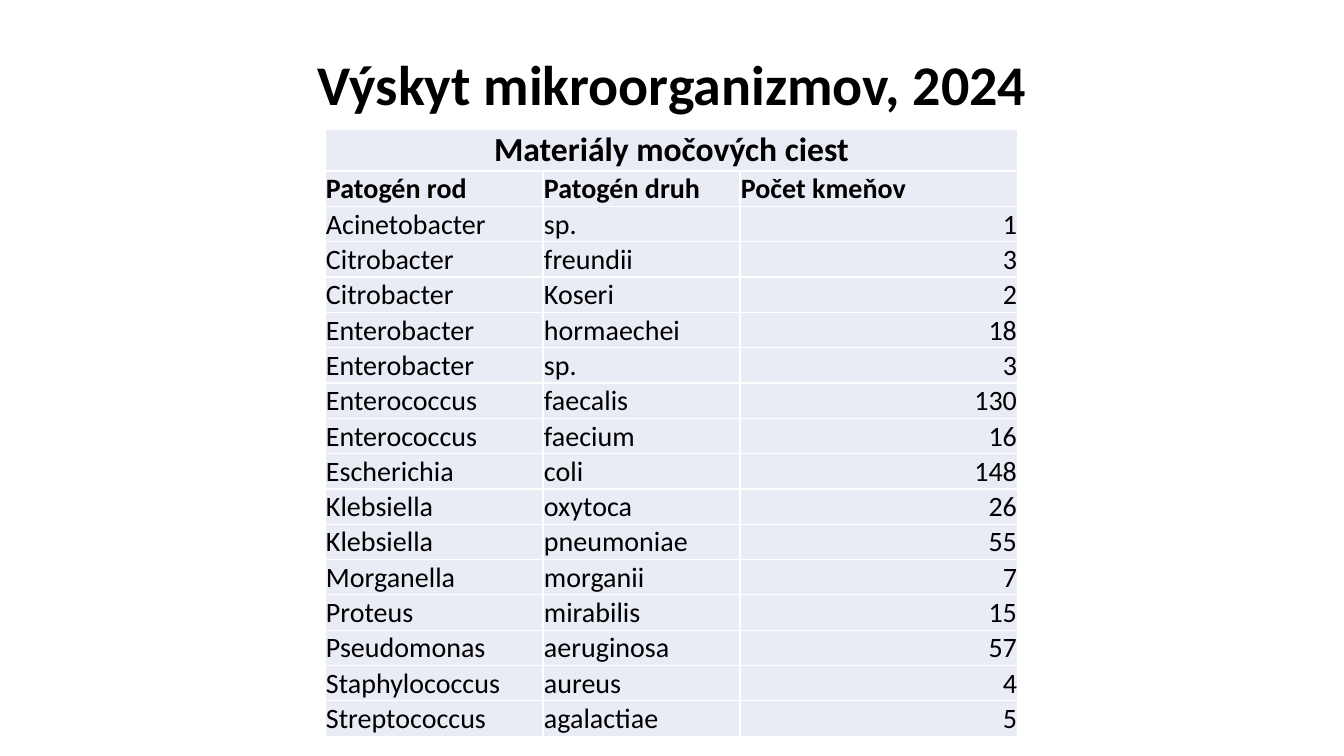
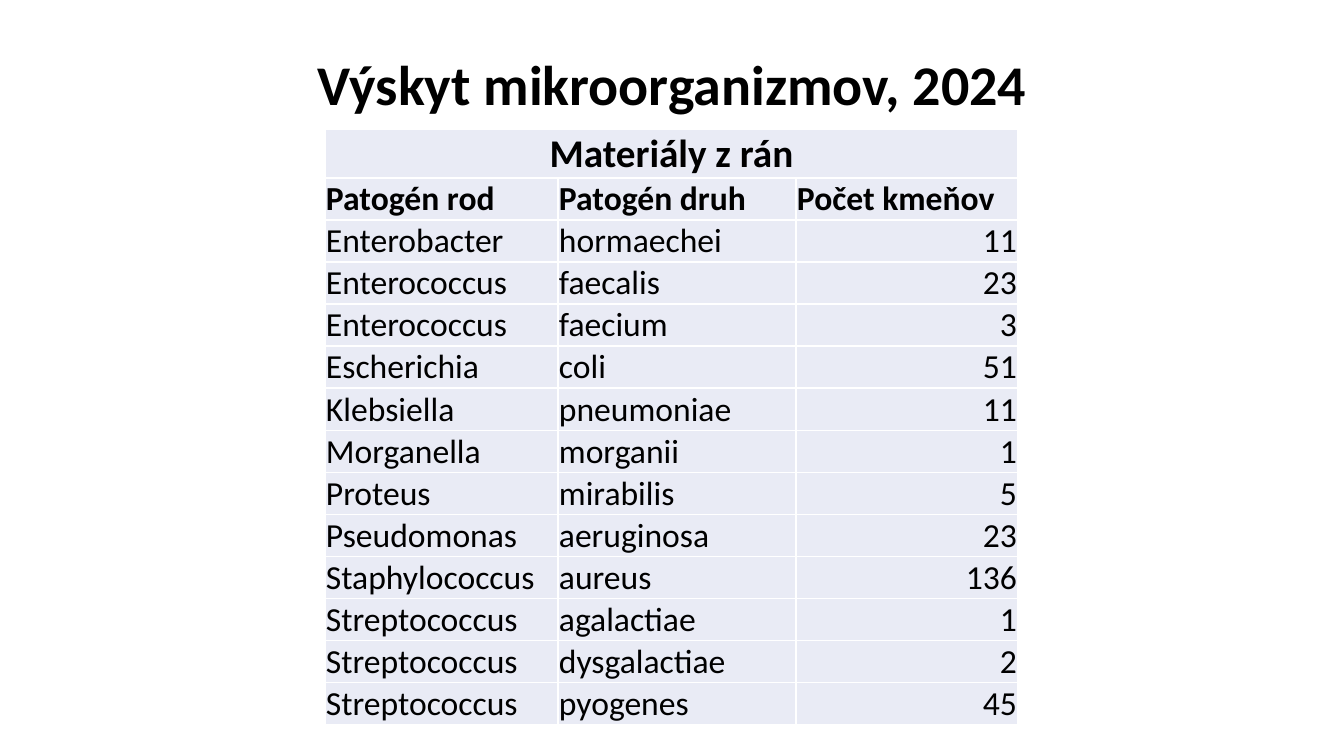
import pptx
import pptx.dml.color
import pptx.enum.text
import pptx.oxml
import pptx.oxml.ns
import pptx.util

ANCHOR = pptx.enum.text.MSO_ANCHOR
ALIGN = pptx.enum.text.PP_ALIGN

TITLE = "Výskyt mikroorganizmov, 2024"
HEADINGS = ("Patogén rod", "Patogén druh", "Počet kmeňov")

URINARY_STRAINS = [
    ("Acinetobacter", "sp.", 1),
    ("Citrobacter", "freundii", 3),
    ("Citrobacter", "Koseri", 2),
    ("Enterobacter", "hormaechei", 18),
    ("Enterobacter", "sp.", 3),
    ("Enterococcus", "faecalis", 130),
    ("Enterococcus", "faecium", 16),
    ("Escherichia", "coli", 148),
    ("Klebsiella", "oxytoca", 26),
    ("Klebsiella", "pneumoniae", 55),
    ("Morganella", "morganii", 7),
    ("Proteus", "mirabilis", 15),
    ("Pseudomonas", "aeruginosa", 57),
    ("Staphylococcus", "aureus", 4),
    ("Streptococcus", "agalactiae", 5),
]

WOUND_STRAINS = [
    ("Enterobacter", "hormaechei", 11),
    ("Enterococcus", "faecalis", 23),
    ("Enterococcus", "faecium", 3),
    ("Escherichia", "coli", 51),
    ("Klebsiella", "pneumoniae", 11),
    ("Morganella", "morganii", 1),
    ("Proteus", "mirabilis", 5),
    ("Pseudomonas", "aeruginosa", 23),
    ("Staphylococcus", "aureus", 136),
    ("Streptococcus", "agalactiae", 1),
    ("Streptococcus", "dysgalactiae", 2),
    ("Streptococcus", "pyogenes", 45),
]


def px(length):
    """Turn px, at 100.8 to the inch, into EMU."""
    return pptx.util.Emu(round(length * 914400 / 100.8))


def rgb(code):
    return pptx.dml.color.RGBColor.from_string(code)


class Deck:
    """The shared style and the slide being filled."""

    FONT = "Calibri"
    INK = "000000"
    CELL = "E9EBF5"
    BORDER = "FFFFFF"

    def __init__(self):
        self.prs = pptx.Presentation()
        self.prs.slide_width = px(1344)
        self.prs.slide_height = px(756)
        self.slide = None

    def add_slide(self, title):
        self.slide = self.prs.slides.add_slide(self.prs.slide_layouts[5])
        heading = self.slide.shapes.title
        heading.left, heading.top = px(251), px(40)
        heading.width, heading.height = px(842), px(94)
        heading.text_frame.vertical_anchor = ANCHOR.MIDDLE
        self.set_text(heading.text_frame, title, size=40, bold=True,
                      align=ALIGN.CENTER, spacing=0.9)

    def set_text(self, frame, text, size, bold=False, align=ALIGN.LEFT, spacing=None):
        paragraph = frame.paragraphs[0]
        paragraph.alignment = align
        paragraph.line_spacing = spacing
        run = paragraph.add_run()
        run.text = text
        run.font.name = self.FONT
        run.font.size = pptx.util.Pt(size)
        run.font.bold = bold
        run.font.color.rgb = rgb(self.INK)

    def style_cell(self, cell):
        cell.vertical_anchor = ANCHOR.BOTTOM
        cell.margin_left = cell.margin_top = cell.margin_right = px(1)
        cell.margin_bottom = px(0)
        cell.fill.solid()
        cell.fill.fore_color.rgb = rgb(self.CELL)
        properties = cell._tc.get_or_add_tcPr()
        for place, side in enumerate(("lnL", "lnR", "lnT", "lnB")):
            properties.insert(place, pptx.oxml.parse_xml(
                f'<a:{side} {pptx.oxml.ns.nsdecls("a")} w="{pptx.util.Pt(1)}">'
                f'<a:solidFill><a:srgbClr val="{self.BORDER}"/></a:solidFill>'
                f'</a:{side}>'))

    def add_strain_table(self, material, strains, widths, size, caption_height, row_height):
        """Add a caption row over the headings and one row per strain."""
        rows = [HEADINGS, *strains]
        table = self.slide.shapes.add_table(
            len(rows) + 1, len(widths), px(325), px(129), px(sum(widths)),
            px(caption_height + row_height * len(rows))).table
        table.first_row = table.horz_banding = False
        for column, width in zip(table.columns, widths):
            column.width = px(width)
        for row in table.rows:
            row.height = px(row_height)
        table.rows[0].height = px(caption_height)
        for cell in table.iter_cells():
            self.style_cell(cell)

        caption = table.cell(0, 0)
        caption.merge(table.cell(0, len(widths) - 1))
        self.set_text(caption.text_frame, material, size=size + 4, bold=True,
                      align=ALIGN.CENTER)
        for row_index, values in enumerate(rows, start=1):
            for column_index, value in enumerate(values):
                self.set_text(table.cell(row_index, column_index).text_frame, str(value),
                              size=size, bold=values is HEADINGS,
                              align=ALIGN.RIGHT if isinstance(value, int) else ALIGN.LEFT)


def main():
    deck = Deck()
    deck.add_slide(TITLE)
    deck.add_strain_table("Materiály močových ciest", URINARY_STRAINS,
                          widths=(218, 197, 278), size=20,
                          caption_height=40, row_height=35)
    deck.add_slide(TITLE)
    deck.add_strain_table("Materiály z rán", WOUND_STRAINS,
                          widths=(233, 238, 222), size=24,
                          caption_height=48, row_height=41)
    deck.prs.save("out.pptx")


if __name__ == "__main__":
    main()
